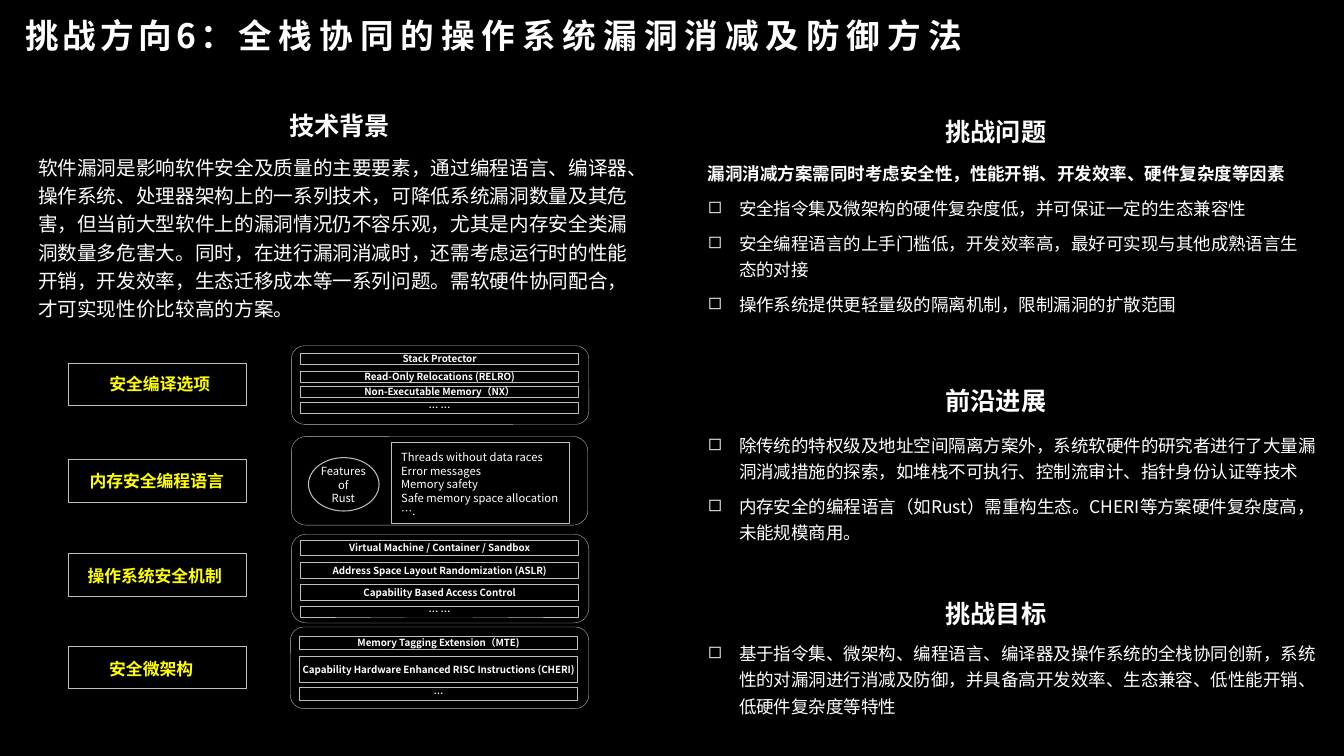
import pptx
import pptx.util
import pptx.dml.color
import pptx.enum.shapes
import pptx.enum.text
import pptx.oxml.ns
from lxml import etree

PX = 9144
FONT = "Noto Sans CJK SC"
WHITE, YELLOW, GREY, BLACK = "FFFFFF", "FFFF00", "BFBFBF", "000000"
SHAPE = pptx.enum.shapes.MSO_SHAPE
ALIGN = pptx.enum.text.PP_ALIGN
ANCHOR = pptx.enum.text.MSO_ANCHOR
AUTO = pptx.enum.text.MSO_AUTO_SIZE
INSET = (10, 5, 10, 5)
FLUSH = (0, 0, 0, 0)


def px(*lengths):
    return [pptx.util.Emu(length * PX) for length in lengths]


def color(value):
    return pptx.dml.color.RGBColor.from_string(value)


def add_tag(parent, tag, **attributes):
    return etree.SubElement(parent, pptx.oxml.ns.qn(tag), attributes)


def add_bullet(para):
    properties = para._p.get_or_add_pPr()
    properties.set("marL", str(31 * PX))
    properties.set("indent", str(-31 * PX))
    add_tag(properties, "a:buChar", char="◻")


def add_span(para, text, size, fill, bold, spacing):
    span = para.add_run()
    span.text = text
    span.font.size = pptx.util.Pt(size)
    span.font.name = FONT
    span.font.bold = bold
    span.font.color.rgb = color(fill)
    properties = span._r.get_or_add_rPr()
    add_tag(properties, "a:ea", typeface=FONT)
    if spacing:
        properties.set("spc", str(spacing * 100))


def write(shape, lines, size=8, fill=WHITE, bold=False, align=ALIGN.LEFT,
          anchor=ANCHOR.TOP, insets=INSET, wrap=True, grow=True,
          leading=None, gap=0, bullets=False, lead_bold=False, spacing=(0,)):
    frame = shape.text_frame
    frame.word_wrap = wrap
    frame.auto_size = AUTO.SHAPE_TO_FIT_TEXT if grow else AUTO.NONE
    frame.vertical_anchor = anchor
    (frame.margin_left, frame.margin_top,
     frame.margin_right, frame.margin_bottom) = px(*insets)
    for index, line in enumerate(lines):
        para = frame.add_paragraph() if index else frame.paragraphs[0]
        heading = lead_bold and index == 0
        para.alignment = align
        if leading:
            para.line_spacing = pptx.util.Pt(leading)
        if gap:
            para.space_after = pptx.util.Pt(gap)
            if index:
                para.space_before = pptx.util.Pt(gap)
        if bullets and not heading:
            add_bullet(para)
        parts = [line] if isinstance(line, str) else line
        for text, space in zip(parts, spacing):
            add_span(para, text, size, fill, bold or heading, space)


def add_text(page, box, lines, **style):
    shape = page.shapes.add_textbox(*px(*box))
    write(shape, lines, **style)


def add_outline(page, box, kind=SHAPE.RECTANGLE, width=0.25):
    shape = page.shapes.add_shape(kind, *px(*box))
    shape.shadow.inherit = False
    shape.fill.background()
    shape.line.color.rgb = color(GREY)
    shape.line.width = pptx.util.Pt(width)
    return shape


def add_panel(page, box):
    panel = page.shapes.add_shape(SHAPE.ROUNDED_RECTANGLE, *px(*box))
    panel.adjustments[0] = 0.06
    panel.shadow.inherit = False
    panel.fill.solid()
    panel.fill.fore_color.rgb = color(BLACK)
    tint = panel.fill._xPr.find(".//" + pptx.oxml.ns.qn("a:srgbClr"))
    add_tag(tint, "a:alpha", val="40000")
    panel.line.fill.background()


def add_heading(page, left, top, text):
    add_text(page, (left, top, 121, 40), [text], size=18, bold=True,
             wrap=False, leading=21.6)


def add_section(page, box, heading, heading_top, lines, body, lead_bold=False):
    left, top, width, height = box
    add_panel(page, box)
    add_heading(page, left + 248, top + heading_top, heading)
    body_top, body_width, body_height = body
    add_text(page, (left + 22, top + body_top, body_width, body_height), lines,
             size=12.5, insets=FLUSH, leading=18.75, gap=3, bullets=True,
             lead_bold=lead_bold)


def add_background(page, box, lines):
    left, top, width, height = box
    add_panel(page, box)
    add_heading(page, left + 255, top + 1, "技术背景")
    add_text(page, (left + 6, top + 41, 620, 177), lines, size=14, leading=20.16)


def add_layer_label(page, box, text, text_box):
    left, top, width, height = box
    add_outline(page, box)
    shift, drop, text_width = text_box
    add_text(page, (left + shift, top + drop, text_width, 30), [text], size=12,
             fill=YELLOW, bold=True, align=ALIGN.CENTER, wrap=False, leading=14.4)


def add_stack(page, box, rows):
    left, top, width, height = box
    add_outline(page, box, SHAPE.ROUNDED_RECTANGLE)
    for row_top, row_height, text in rows:
        row = add_outline(page, (left + 9, top + row_top, 275, row_height))
        write(row, [text], size=7, bold=True, align=ALIGN.CENTER,
              anchor=ANCHOR.MIDDLE, insets=(3, 1, 2, 1), wrap=False, grow=False)


def add_rust(page, box):
    left, top, width, height = box
    add_outline(page, box, SHAPE.ROUNDED_RECTANGLE)
    add_outline(page, (left + 17, top + 21, 70, 53), SHAPE.OVAL, 0.75)
    add_text(page, (left + 9, top + 23, 85, 50), ["Features", "of", "Rust"],
             align=ALIGN.CENTER, leading=9.6)
    add_outline(page, (left + 99, top + 6, 177, 80))
    features = ["Threads without data races", "Error messages", "Memory safety",
                "Safe memory space allocation", "…."]
    add_text(page, (left + 99, top + 9, 182, 77), features, leading=9.6)


def add_layers(page, box):
    left, top, width, height = box
    add_panel(page, box)
    labels = [
        (27, "安全编译选项", (30, 6, 121)),
        (123, "内存安全编程语言", (10, 6, 155)),
        (216, "操作系统安全机制", (8, 7, 155)),
        (308, "安全微架构", (30, 8, 104)),
    ]
    for label_top, text, text_box in labels:
        add_layer_label(page, (left + 47, top + label_top, 176, 42), text, text_box)
    add_stack(page, (left + 268, top + 10, 295, 78), [
        (7, 11, "Stack Protector"),
        (25, 11, "Read-Only Relocations (RELRO)"),
        (40, 11, "Non-Executable Memory（NX）"),
        (56, 11, "… …"),
    ])
    add_rust(page, (left + 268, top + 100, 294, 88))
    add_stack(page, (left + 268, top + 197, 295, 88), [
        (6, 15, "Virtual Machine / Container / Sandbox"),
        (28, 16, "Address Space Layout Randomization (ASLR)"),
        (50, 15, "Capability Based Access Control"),
        (71, 11, "… …"),
    ])
    add_stack(page, (left + 267, top + 289, 296, 81), [
        (9, 13, "Memory Tagging Extension（MTE)"),
        (29, 26, "Capability Hardware Enhanced RISC Instructions (CHERI)"),
        (60, 13, "…"),
    ])


def main():
    deck = pptx.Presentation()
    deck.slide_width, deck.slide_height = px(1333, 750)
    page = deck.slides.add_slide(deck.slide_layouts[6])
    page.background.fill.solid()
    page.background.fill.fore_color.rgb = color(BLACK)
    add_text(page, (25, 0, 1050, 69),
             [("挑战方向6：", "全栈协同的操作系统漏洞消减及防御方法")],
             size=24, bold=True, anchor=ANCHOR.MIDDLE, insets=FLUSH,
             grow=False, spacing=(3, 5))
    add_background(page, (22, 104, 634, 221), [
        "软件漏洞是影响软件安全及质量的主要要素，通过编程语言、编译器、操作系统、处理器架构上的一系列技术，"
        "可降低系统漏洞数量及其危害，但当前大型软件上的漏洞情况仍不容乐观，尤其是内存安全类漏洞数量多危害大。"
        "同时，在进行漏洞消减时，还需考虑运行时的性能开销，开发效率，生态迁移成本等一系列问题。"
        "需软硬件协同配合，才可实现性价比较高的方案。"])
    add_layers(page, (21, 333, 634, 386))
    add_section(page, (680, 104, 634, 239), "挑战问题", 6, [
        "漏洞消减方案需同时考虑安全性，性能开销、开发效率、硬件复杂度等因素",
        "安全指令集及微架构的硬件复杂度低，并可保证一定的生态兼容性",
        "安全编程语言的上手门槛低，开发效率高，最好可实现与其他成熟语言生态的对接",
        "操作系统提供更轻量级的隔离机制，限制漏洞的扩散范围",
    ], (53, 591, 154), lead_bold=True)
    add_section(page, (680, 366, 635, 182), "前沿进展", 11, [
        "除传统的特权级及地址空间隔离方案外，系统软硬件的研究者进行了大量漏洞消减措施的探索，"
        "如堆栈不可执行、控制流审计、指针身份认证等技术",
        "内存安全的编程语言（如Rust）需重构生态。CHERI等方案硬件复杂度高，未能规模商用。",
    ], (60, 606, 111))
    add_section(page, (680, 573, 634, 146), "挑战目标", 16, [
        "基于指令集、微架构、编程语言、编译器及操作系统的全栈协同创新，系统性的对漏洞进行消减及防御，"
        "并具备高开发效率、生态兼容、低性能开销、低硬件复杂度等特性",
    ], (60, 606, 76))
    deck.save("out.pptx")


if __name__ == "__main__":
    main()
